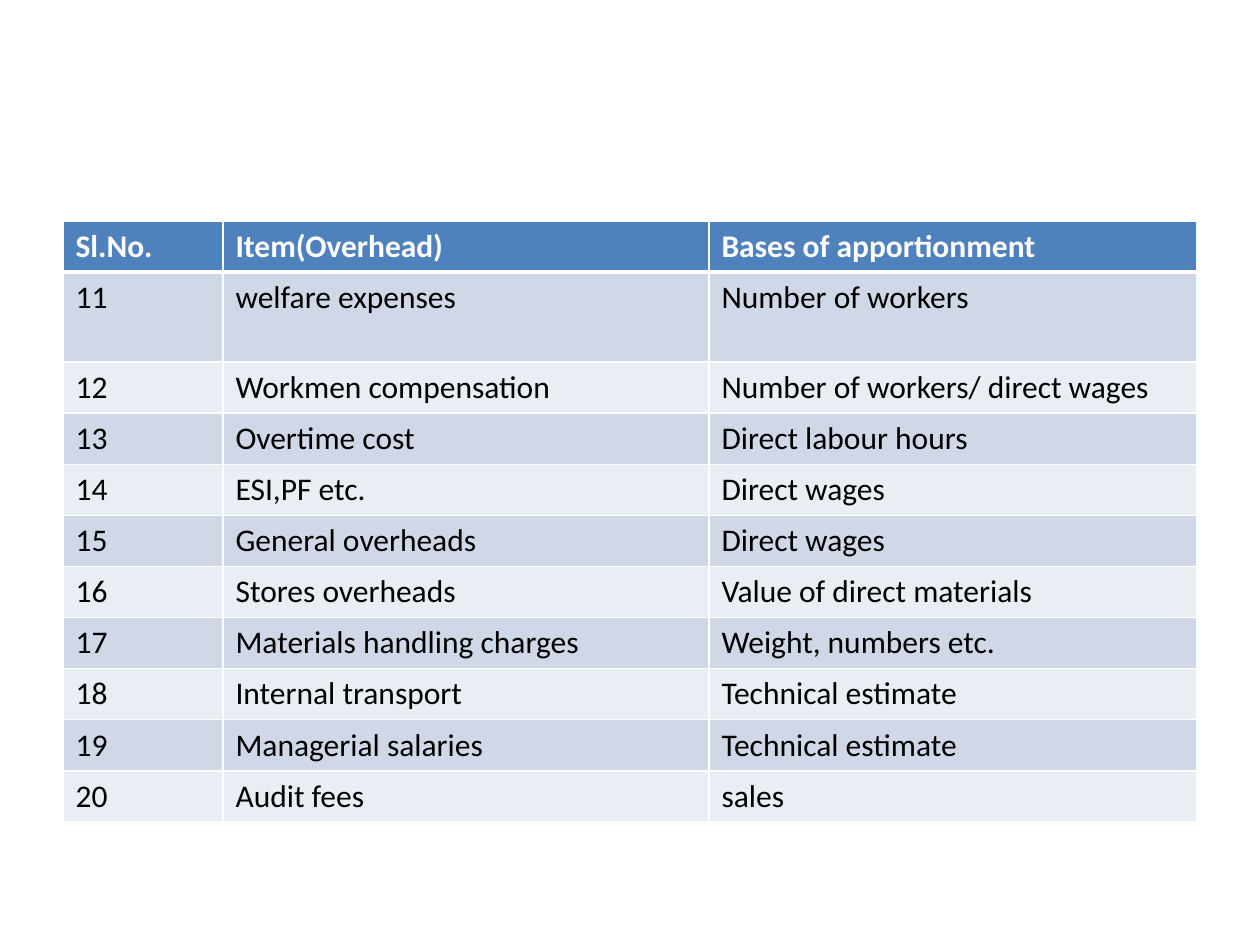
from dataclasses import dataclass

from lxml.etree import SubElement
from pptx import Presentation
from pptx.dml.color import RGBColor
from pptx.oxml.ns import qn
from pptx.util import Pt

SCALE = 914400 // 126  # EMU in one px


@dataclass(frozen=True)
class Theme:
    font: str = "Calibri"
    size: int = 18
    head: str = "4F81BD"
    bands: tuple = ("D0D8E8", "E9EDF4")
    light: str = "FFFFFF"
    dark: str = "000000"
    thin: int = 1
    thick: int = 3


THEME = Theme()

HEAD = ("Sl.No.", "Item(Overhead)", "Bases of apportionment")
FIRST = 11  # number of the first item
ITEMS = (
    ("welfare expenses", "Number of workers"),
    ("Workmen compensation", "Number of workers/ direct wages"),
    ("Overtime cost", "Direct labour hours"),
    ("ESI,PF etc.", "Direct wages"),
    ("General overheads", "Direct wages"),
    ("Stores overheads", "Value of direct materials"),
    ("Materials handling charges", "Weight, numbers etc."),
    ("Internal transport", "Technical estimate"),
    ("Managerial salaries", "Technical estimate"),
    ("Audit fees", "sales"),
)

LEFT, TOP = 63, 221
WIDTHS = (160, 486, 488)
ROW, TALL = 51, 90  # the first item has a taller row


def px(n):
    return n * SCALE


def set_edge(cell, side, width):
    props = cell._tc.get_or_add_tcPr()
    line = SubElement(props, qn(f"a:ln{side}"), w=str(Pt(width)))
    fill = SubElement(line, qn("a:solidFill"))
    SubElement(fill, qn("a:srgbClr"), val=THEME.light)


def fill_cell(cell, text, back, ink, bold, top, base):
    # Borders go before the fill in the cell properties
    for side, width in zip("LRTB", (THEME.thin, THEME.thin, top, base)):
        set_edge(cell, side, width)
    cell.fill.solid()
    cell.fill.fore_color.rgb = RGBColor.from_string(back)
    cell.text = text
    font = cell.text_frame.paragraphs[0].font
    font.name, font.size, font.bold = THEME.font, Pt(THEME.size), bold
    font.color.rgb = RGBColor.from_string(ink)


def add_grid(slide, rows, heights):
    frame = slide.shapes.add_table(
        len(rows), len(WIDTHS), px(LEFT), px(TOP),
        px(sum(WIDTHS)), px(sum(heights)))
    table = frame.table
    for col, width in zip(table.columns, WIDTHS):
        col.width = px(width)
    for i, (row, texts, height) in enumerate(zip(table.rows, rows, heights)):
        row.height = px(height)
        head = i == 0
        back = THEME.head if head else THEME.bands[(i - 1) % 2]
        ink = THEME.light if head else THEME.dark
        # A thick rule parts the header from the items
        top = THEME.thick if i == 1 else THEME.thin
        base = THEME.thick if head else THEME.thin
        for cell, text in zip(row.cells, texts):
            fill_cell(cell, text, back, ink, head, top, base)


def main():
    deck = Presentation()
    deck.slide_width, deck.slide_height = px(1260), px(945)
    slide = deck.slides.add_slide(deck.slide_layouts[6])

    # Table of overheads, numbered by rule
    rows = [HEAD] + [(str(n), *item) for n, item in enumerate(ITEMS, FIRST)]
    heights = [ROW, TALL] + [ROW] * (len(ITEMS) - 1)
    add_grid(slide, rows, heights)

    deck.save("out.pptx")


if __name__ == "__main__":
    main()
